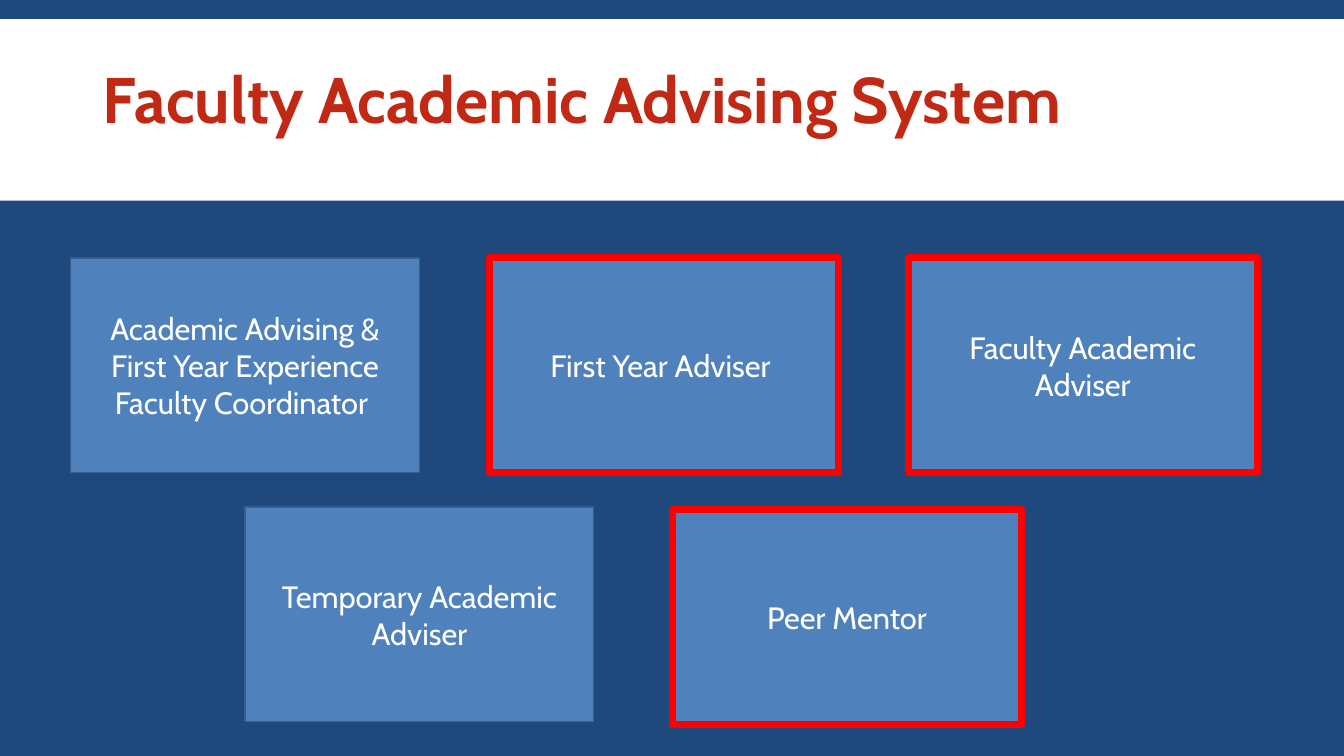
from pptx import Presentation
from pptx.dml.color import RGBColor
from pptx.enum.shapes import MSO_SHAPE as Preset
from pptx.enum.text import MSO_ANCHOR as Anchor, MSO_AUTO_SIZE as AutoSize, PP_ALIGN as Align
from pptx.util import Inches, Pt

COLORS = {
    "navy": "1F497D",
    "white": "FFFFFF",
    "title": "C22914",
    "card": "4F81BD",
    "edge": "3A5F8C",
    "highlight": "FF0000",
}
FONT = "Cabin"
CARD_WIDTH, CARD_HEIGHT = 3.46, 2.13
TOP_ROW = [
    ("Academic Advising & First Year Experience Faculty Coordinator ", False),
    ("First Year Adviser ", True),
    ("Faculty Academic Adviser", True),
]
TOP_LEFT, TOP_PITCH, TOP_Y = 0.7, 4.155, 2.56
BOTTOM_ROW = [
    ("Temporary Academic Adviser", False, 2.43, 5.03),
    ("Peer Mentor", True, 6.67, 5.06),
]


def color(name):
    """Return the named palette colour."""
    return RGBColor.from_string(COLORS[name])


def write(shape, text, size, color_name, align, bold=False):
    """Put one formatted, vertically centred paragraph in a shape."""
    frame = shape.text_frame
    frame.text = text
    frame.word_wrap = True
    frame.auto_size = AutoSize.NONE
    frame.vertical_anchor = Anchor.MIDDLE
    para = frame.paragraphs[0]
    para.alignment = align
    font = para.runs[0].font
    font.name, font.size, font.bold = FONT, Pt(size), bold
    font.color.rgb = color(color_name)
    return para


def add_box(page, left, top, width, height, fill):
    """Add a flat filled rectangle."""
    box = page.shapes.add_shape(
        Preset.RECTANGLE, Inches(left), Inches(top), Inches(width), Inches(height))
    box.shadow.inherit = False
    box.fill.solid()
    box.fill.fore_color.rgb = color(fill)
    return box


def add_header(page, left, top, width, height):
    """Place the white band with the slide title on it."""
    band = add_box(page, left, top, width, height, "white")
    band.line.fill.background()
    title = page.shapes.title
    title.element.addprevious(band.element)
    title.left, title.top = Inches(left + 0.92), Inches(top + 0.21)
    title.width, title.height = Inches(width - 1.83), Inches(height - 0.54)
    para = write(title, "Faculty Academic Advising System", 46, "title", Align.LEFT, True)
    para.line_spacing = 0.85


def add_card(page, text, highlighted, left, top):
    """Place one role card, outlined in red when highlighted."""
    card = add_box(page, left, top, CARD_WIDTH, CARD_HEIGHT, "card")
    card.line.color.rgb = color("highlight" if highlighted else "edge")
    card.line.width = Pt(5 if highlighted else 1)
    write(card, text, 22, "white", Align.CENTER)


def main():
    """Build and save the advising slide."""
    deck = Presentation()
    deck.slide_width, deck.slide_height = Inches(13.33), Inches(7.5)
    page = deck.slides.add_slide(deck.slide_layouts[5])
    page.background.fill.solid()
    page.background.fill.fore_color.rgb = color("navy")
    add_header(page, 0, 0.19, 13.33, 1.8)
    for column, (text, highlighted) in enumerate(TOP_ROW):
        add_card(page, text, highlighted, TOP_LEFT + column * TOP_PITCH, TOP_Y)
    for role in BOTTOM_ROW:
        add_card(page, *role)
    deck.save("out.pptx")


if __name__ == "__main__":
    main()
